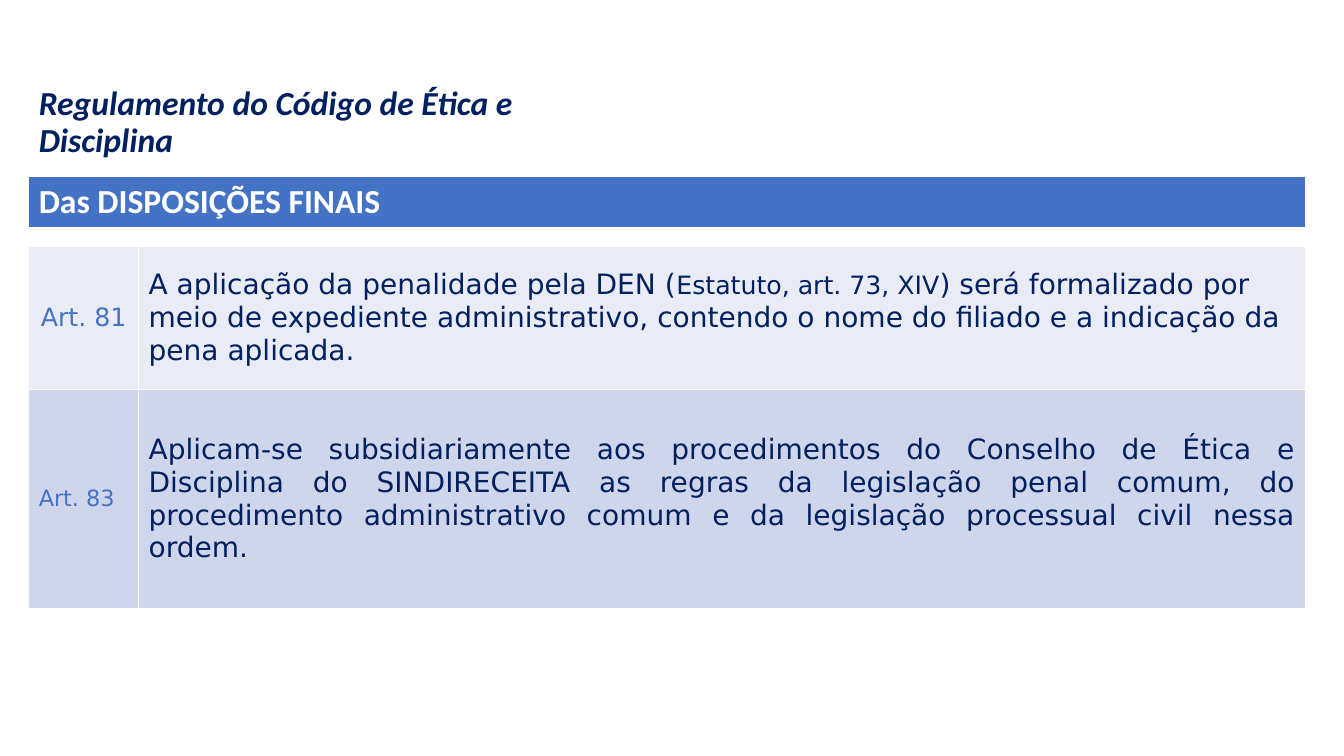
from dataclasses import dataclass

from lxml.etree import SubElement
from pptx import Presentation
from pptx.dml.color import RGBColor as RGB
from pptx.enum.text import MSO_ANCHOR as ANCHOR, PP_ALIGN as ALIGN
from pptx.oxml.ns import qn
from pptx.util import Pt


@dataclass(frozen=True)
class Theme:
    """Colours, fonts and type sizes of the slide."""
    navy: RGB = RGB(0x00, 0x20, 0x60)
    blue: RGB = RGB(0x44, 0x72, 0xC4)
    white: RGB = RGB(0xFF, 0xFF, 0xFF)
    bands: tuple = (RGB(0xE9, 0xEB, 0xF5), RGB(0xCF, 0xD5, 0xEA))
    head_font: str = "Calibri"
    body_font: str = "DejaVu Sans"
    head: int = 24
    body: int = 20
    note: int = 18
    small: int = 16


T = Theme()

ARTICLES = [
    ("Art. 81", T.note, ALIGN.CENTER, ALIGN.LEFT, [
        ("A aplicação da penalidade pela DEN (", T.body),
        ("Estatuto, art. 73, XIV", T.note),
        (") será formalizado por meio de expediente administrativo, contendo "
         "o nome do filiado e a indicação da pena aplicada.", T.body)]),
    ("Art. 83", T.small, ALIGN.LEFT, ALIGN.JUSTIFY, [
        ("Aplicam-se subsidiariamente aos procedimentos do Conselho de Ética e "
         "Disciplina do SINDIRECEITA as regras da legislação penal comum, do "
         "procedimento administrativo comum e da legislação processual civil "
         "nessa ordem.", T.body)]),
]


def add_run(p, text, size=T.body, font=T.body_font, color=T.navy, bold=False, italic=False):
    """Append a formatted run to a paragraph."""
    r = p.add_run()
    r.text = text
    r.font.size, r.font.name = Pt(size), font
    r.font.bold, r.font.italic = bold, italic
    r.font.color.rgb = color


def fill_cell(cell, color, align=ALIGN.LEFT):
    """Fill a cell, centre it vertically and return its paragraph."""
    cell.fill.solid()
    cell.fill.fore_color.rgb = color
    cell.vertical_anchor = ANCHOR.MIDDLE
    p = cell.text_frame.paragraphs[0]
    p.alignment = align
    return p


def clear_cell(cell):
    """Leave a cell unfilled and small enough for a narrow spacer row."""
    cell.fill.background()
    cell.margin_top = cell.margin_bottom = 0
    p = cell.text_frame.paragraphs[0]
    SubElement(p._p, qn("a:endParaRPr")).set("sz", "400")


def add_title(s, x, y, w, h):
    """Place the slide title in its placeholder."""
    sp = s.shapes.title
    sp.left, sp.top, sp.width, sp.height = Pt(x), Pt(y), Pt(w), Pt(h)
    tf = sp.text_frame
    tf.word_wrap = True
    tf.vertical_anchor = ANCHOR.TOP
    p = tf.paragraphs[0]
    p.alignment, p.line_spacing = ALIGN.LEFT, 0.9
    add_run(p, "Regulamento do Código de Ética e Disciplina", T.head,
            T.head_font, bold=True, italic=True)


def add_articles(s, x, y, w, h):
    """Build the table of articles under its heading row."""
    label_w, head_h, gap_h, first_h = 78.5, 35, 13.5, 102
    heights = (head_h, gap_h, first_h, h - head_h - gap_h - first_h)
    table = s.shapes.add_table(len(heights), 2, Pt(x), Pt(y), Pt(w), Pt(h)).table
    for col, width in zip(table.columns, (label_w, w - label_w)):
        col.width = Pt(width)
    for row, height in zip(table.rows, heights):
        row.height = Pt(height)

    head = table.cell(0, 0)
    head.merge(table.cell(0, 1))
    add_run(fill_cell(head, T.blue), "Das DISPOSIÇÕES FINAIS", T.head,
            T.head_font, T.white, bold=True)
    for cell in table.rows[1].cells:
        clear_cell(cell)

    for i, (label, size, label_align, align, parts) in enumerate(ARTICLES):
        left, right = table.rows[i + 2].cells
        add_run(fill_cell(left, T.bands[i], label_align), label, size, color=T.blue)
        p = fill_cell(right, T.bands[i], align)
        for text, part_size in parts:
            add_run(p, text, part_size)


def main():
    """Create the presentation and save it."""
    prs = Presentation()
    prs.slide_width, prs.slide_height = Pt(960), Pt(540)
    s = prs.slides.add_slide(prs.slide_layouts[5])
    add_articles(s, 20.5, 126, 912, 307.5)
    add_title(s, 20.5, 58.5, 443, 26.5)
    prs.save("out.pptx")


if __name__ == "__main__":
    main()
